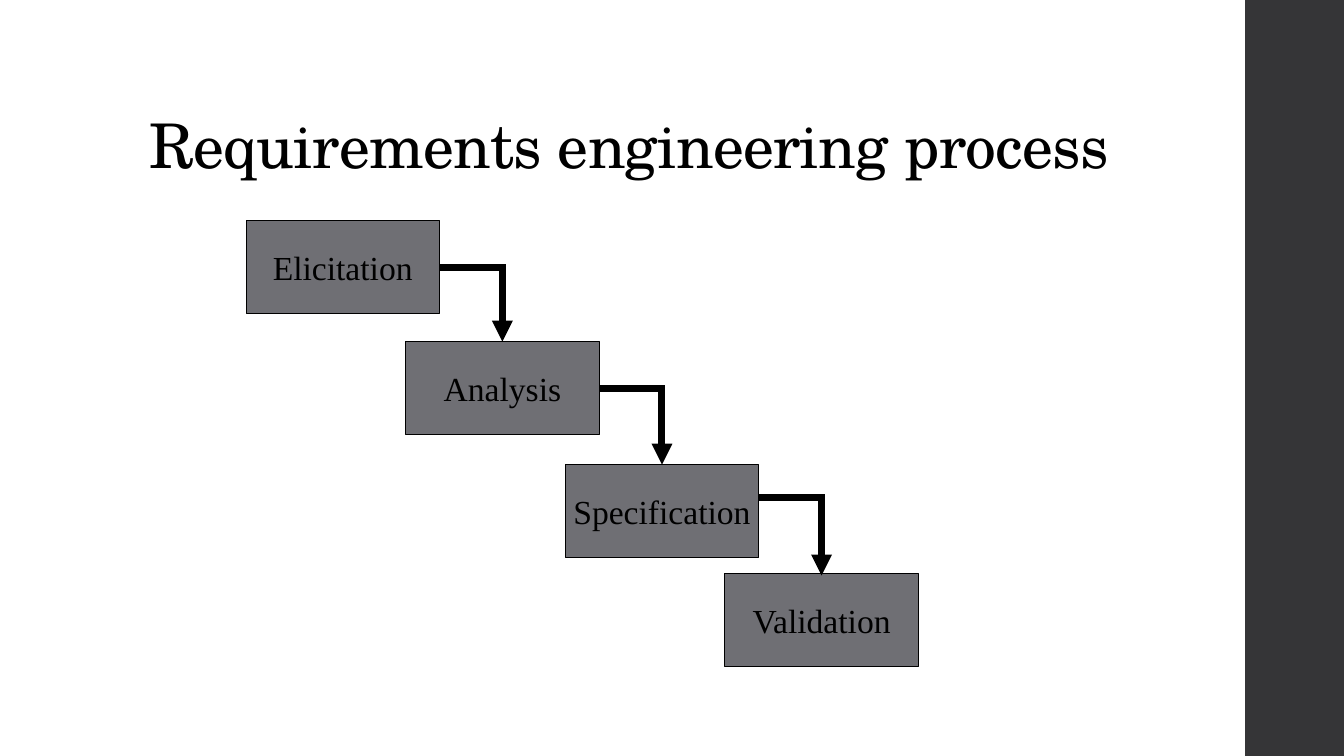
import pptx
import pptx.util
import pptx.dml.color
import pptx.enum.shapes
import pptx.enum.text
import pptx.oxml.ns
import lxml.etree

Inches = pptx.util.Inches
Pt = pptx.util.Pt
RGB = pptx.dml.color.RGBColor.from_string
MSO_SHAPE = pptx.enum.shapes.MSO_SHAPE
ANCHOR = pptx.enum.text.MSO_ANCHOR
ALIGN = pptx.enum.text.PP_ALIGN
qn = pptx.oxml.ns.qn

THEME = {
    "band": RGB("353537"),
    "box": RGB("6F6F74"),
    "ink": RGB("000000"),
    "title": {"name": "TeX Gyre Schola", "size": Pt(44)},
    "label": {"name": "Times New Roman", "size": Pt(24)},
    "outline": Pt(0.75),
    "arrow": Pt(5),
}


def add_text(tf, text, font, frame, paragraph):
    for key, value in frame.items():
        setattr(tf, key, value)
    p = tf.paragraphs[0]
    for key, value in paragraph.items():
        setattr(p, key, value)
    r = p.add_run()
    r.text = text
    for key, value in font.items():
        setattr(r.font, key, value)
    r.font.color.rgb = THEME["ink"]
    return r


def add_rect(s, x, y, w, h, fill):
    sp = s.shapes.add_shape(MSO_SHAPE.RECTANGLE, Inches(x), Inches(y), Inches(w), Inches(h))
    sp.shadow.inherit = False
    sp.fill.solid()
    sp.fill.fore_color.rgb = fill
    sp.line.fill.background()
    return sp


prs = pptx.Presentation()
prs.slide_width, prs.slide_height = Inches(13.33), Inches(7.5)
s = prs.slides.add_slide(prs.slide_layouts[6])

add_rect(s, 12.35, 0, 1, 7.5, THEME["band"])

title = s.shapes.add_textbox(Inches(1.38), Inches(0.4), Inches(10.6), Inches(1.45))
r = add_text(title.text_frame, "Requirements engineering process", THEME["title"],
             {"word_wrap": True, "vertical_anchor": ANCHOR.BOTTOM}, {"line_spacing": 0.9})
r.font._element.set("spc", "-50")

BOX_W, BOX_H = 1.92, 0.92
LEFT, STEP = 2.44, 1.583
steps = [("Elicitation", 2.19), ("Analysis", 3.39), ("Specification", 4.61), ("Validation", 5.69)]

for i, (name, top) in enumerate(steps):
    sp = add_rect(s, LEFT + i * STEP, top, BOX_W, BOX_H, THEME["box"])
    sp.line.color.rgb = THEME["ink"]
    sp.line.width = THEME["outline"]
    add_text(sp.text_frame, name, THEME["label"],
             {"word_wrap": False, "vertical_anchor": ANCHOR.MIDDLE}, {"alignment": ALIGN.CENTER})

arrows = [(2.65, 3.39), (3.85, 4.61), (4.94, 5.71)]

for i, (start, end) in enumerate(arrows):
    right = LEFT + i * STEP + BOX_W
    next_middle = LEFT + (i + 1) * STEP + BOX_W / 2
    arrow = s.shapes.add_connector(pptx.enum.shapes.MSO_CONNECTOR.ELBOW, Inches(right),
                                   Inches(start), Inches(next_middle), Inches(end))
    arrow.line.color.rgb = THEME["ink"]
    arrow.line.width = THEME["arrow"]
    spPr = arrow._element.spPr
    spPr.find(qn("a:prstGeom")).set("prst", "bentConnector2")
    ln = spPr.find(qn("a:ln"))
    lxml.etree.SubElement(ln, qn("a:miter"), lim="800000")
    lxml.etree.SubElement(ln, qn("a:tailEnd"), type="triangle")
    lxml.etree.SubElement(spPr, qn("a:effectLst"))

prs.save("out.pptx")
